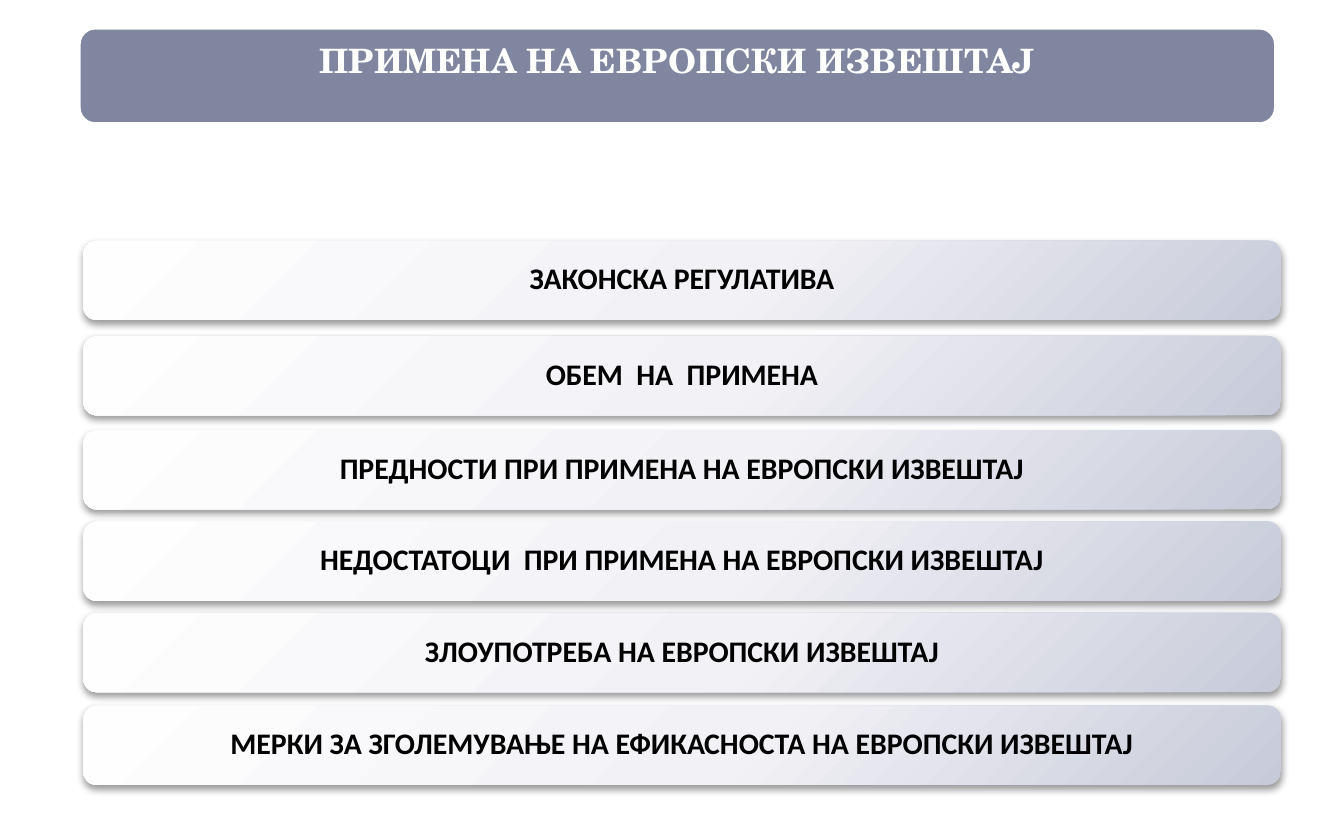
from dataclasses import dataclass

from pptx import Presentation
from pptx.dml.color import RGBColor
from pptx.enum.shapes import MSO_SHAPE
from pptx.enum.text import MSO_ANCHOR, PP_ALIGN
from pptx.oxml import parse_xml
from pptx.oxml.ns import nsdecls
from pptx.util import Inches, Pt

ROUNDED = MSO_SHAPE.ROUNDED_RECTANGLE
CENTER = PP_ALIGN.CENTER
TOP, MIDDLE = MSO_ANCHOR.TOP, MSO_ANCHOR.MIDDLE


@dataclass(frozen=True)
class Theme:
    title_fill: str = "8086A0"
    title_text: str = "FFFFFF"
    title_border: str = "FFFFFF"
    bar_text: str = "000000"
    bar_stops: tuple = ((0, "FEFEFE"), (55, "F2F2F6"), (100, "C7CAD9"))
    shadow: str = "000000"
    title_font: str = "TeX Gyre Schola"
    bar_font: str = "Calibri"
    title_size: int = 18
    bar_size: int = 16


class SlideBuilder:
    """Holds the theme and the current slide."""

    def __init__(self, slide, theme):
        self.slide = slide
        self.theme = theme

    def add_box(self, left, top, width, height):
        box = self.slide.shapes.add_shape(
            ROUNDED, Inches(left), Inches(top), Inches(width), Inches(height))
        box.shadow.inherit = False
        return box

    def add_text(self, box, text, color, frame_format, font_format, para_format):
        frame = box.text_frame
        para = frame.paragraphs[0]
        span = para.add_run()
        span.text = text
        span.font.color.rgb = RGBColor.from_string(color)
        formats = ((frame, frame_format), (span.font, font_format),
                   (para, {"alignment": CENTER, **para_format}))
        for target, values in formats:
            for name, value in values.items():
                setattr(target, name, value)

    def add_title(self, text):
        theme = self.theme
        box = self.add_box(0.59, 0.21, 8.9, 0.71)
        box.fill.solid()
        box.fill.fore_color.rgb = RGBColor.from_string(theme.title_fill)
        box.line.color.rgb = RGBColor.from_string(theme.title_border)
        box.line.width = Pt(1.5)
        self.add_text(
            box, text, theme.title_text,
            {"word_wrap": True, "vertical_anchor": TOP},
            {"name": theme.title_font, "size": Pt(theme.title_size), "bold": True},
            {})

    def add_bar(self, top, text):
        theme = self.theme
        box = self.add_box(0.62, top, 8.91, 0.59)
        box.line.fill.background()
        self.add_gradient(box)
        self.add_shadow(box)
        inset = Inches(0.07)
        self.add_text(
            box, text, theme.bar_text,
            {"word_wrap": True, "vertical_anchor": MIDDLE,
             "margin_left": inset, "margin_right": inset,
             "margin_top": inset, "margin_bottom": inset},
            {"name": theme.bar_font, "size": Pt(theme.bar_size), "bold": True},
            {"line_spacing": 0.9})

    def add_gradient(self, box):
        stops = "".join(
            f'<a:gs pos="{place * 1000}"><a:srgbClr val="{color}"/></a:gs>'
            for place, color in self.theme.bar_stops)
        gradient = parse_xml(
            f'<a:gradFill {nsdecls("a")} rotWithShape="1"><a:gsLst>{stops}</a:gsLst>'
            '<a:path path="circle"><a:fillToRect l="-40000" t="-90000" '
            'r="140000" b="190000"/></a:path></a:gradFill>')
        box.element.spPr.find("{*}ln").addprevious(gradient)

    def add_shadow(self, box):
        effects = box.element.spPr.find("{*}effectLst")
        effects.append(parse_xml(
            f'<a:outerShdw {nsdecls("a")} blurRad="{Pt(4.1)}" dist="{Pt(2)}" '
            f'dir="5400000" rotWithShape="0"><a:srgbClr val="{self.theme.shadow}">'
            '<a:alpha val="40000"/></a:srgbClr></a:outerShdw>'))


TITLE = "ПРИМЕНА НА ЕВРОПСКИ ИЗВЕШТАЈ"
# Top edge and wording of each topic; the gaps differ slightly
TOPICS = (
    (1.79, "ЗАКОНСКА РЕГУЛАТИВА"),
    (2.5, "ОБЕМ  НА  ПРИМЕНА"),
    (3.2, "ПРЕДНОСТИ ПРИ ПРИМЕНА НА ЕВРОПСКИ ИЗВЕШТАЈ"),
    (3.88, "НЕДОСТАТОЦИ  ПРИ ПРИМЕНА НА ЕВРОПСКИ ИЗВЕШТАЈ"),
    (4.56, "ЗЛОУПОТРЕБА НА ЕВРОПСКИ ИЗВЕШТАЈ"),
    (5.25, "МЕРКИ ЗА ЗГОЛЕМУВАЊЕ НА ЕФИКАСНОСТА НА ЕВРОПСКИ ИЗВЕШТАЈ"),
)


def main():
    deck = Presentation()
    deck.slide_width, deck.slide_height = Inches(10), Inches(6.25)
    page = deck.slides.add_slide(deck.slide_layouts[6])
    builder = SlideBuilder(page, Theme())

    # Topic bars
    for top, text in TOPICS:
        builder.add_bar(top, text)

    # Title banner
    builder.add_title(TITLE)

    deck.save("out.pptx")


if __name__ == "__main__":
    main()
